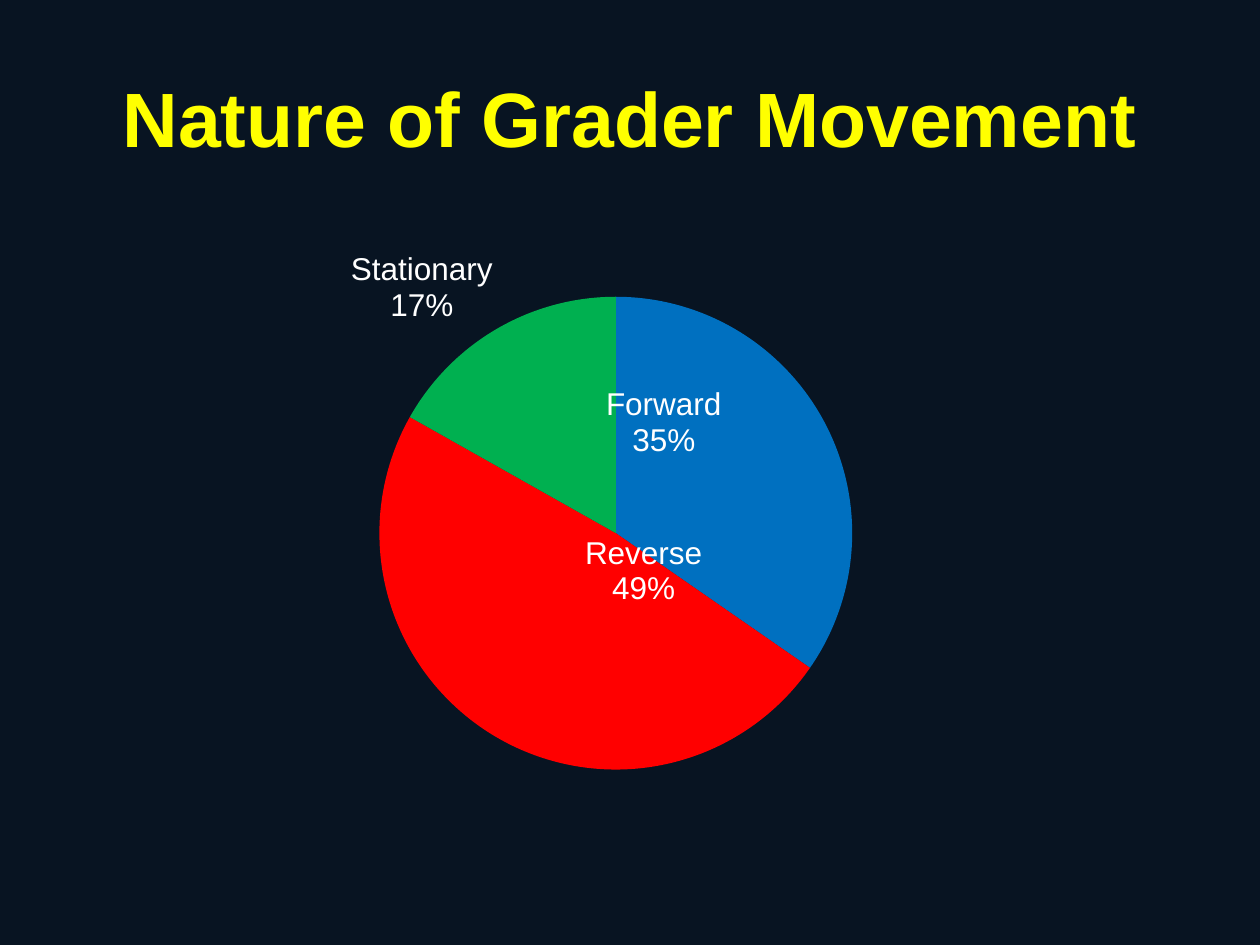
from lxml import etree
from pptx import Presentation
from pptx.chart.data import CategoryChartData
from pptx.dml.color import RGBColor
from pptx.enum.chart import XL_CHART_TYPE, XL_LABEL_POSITION
from pptx.enum.text import MSO_ANCHOR, PP_ALIGN
from pptx.oxml.ns import qn
from pptx.util import Emu, Pt

PIE = XL_CHART_TYPE.PIE
CENTER_LABEL = XL_LABEL_POSITION.CENTER
OUTSIDE_LABEL = XL_LABEL_POSITION.OUTSIDE_END
MIDDLE = MSO_ANCHOR.MIDDLE
CENTER = PP_ALIGN.CENTER

NAVY = RGBColor(0x08, 0x14, 0x22)
YELLOW = RGBColor(0xFF, 0xFF, 0x00)
WHITE = RGBColor(0xFF, 0xFF, 0xFF)
BLUE = RGBColor(0x00, 0x70, 0xC0)
RED = RGBColor(0xFF, 0x00, 0x00)
GREEN = RGBColor(0x00, 0xB0, 0x50)

FONT = "Arial"
EMU_PER_PX = 914400 / 126
MOVEMENTS = [("Forward", 35, BLUE), ("Reverse", 49, RED), ("Stationary", 17, GREEN)]
LABEL_SHIFTS = {0: (-0.05, -0.09), 1: (0.08, -0.1)}


def px(length):
    return Emu(round(length * EMU_PER_PX))


def style_font(font, size, color, bold=False):
    font.name = FONT
    font.size = Pt(size)
    font.bold = bold
    font.color.rgb = color


def add_title(slide, wording):
    title = slide.shapes.title
    title.left, title.top, title.width, title.height = px(63), px(38), px(1134), px(158)
    title.text_frame.word_wrap = True
    title.text_frame.vertical_anchor = MIDDLE
    heading = title.text_frame.paragraphs[0]
    heading.alignment = CENTER
    run = heading.add_run()
    run.text = wording
    style_font(run.font, 44, YELLOW, bold=True)


def make_layout(**settings):
    layout = etree.Element(qn("c:layout"))
    manual = etree.SubElement(layout, qn("c:manualLayout"))
    for tag, value in settings.items():
        etree.SubElement(manual, qn(f"c:{tag}")).set("val", str(value))
    return layout


def place_plot(chart):
    plot_area = chart.plots[0]._element.getparent()
    for automatic in plot_area.findall(qn("c:layout")):
        plot_area.remove(automatic)
    plot_area.insert(0, make_layout(layoutTarget="inner", xMode="edge", yMode="edge",
                                    x=0.279, y=0.123, w=0.417, h=0.758))


def show_name_and_percent(label):
    for tag, shown in (("showVal", "0"), ("showCatName", "1"), ("showPercent", "1")):
        label.find(qn(f"c:{tag}")).set("val", shown)
    separator = etree.Element(qn("c:separator"))
    separator.text = "\n"
    label.find(qn("c:showBubbleSize")).addnext(separator)


def label_slices(series):
    labels = series.data_labels
    style_font(labels.font, 18, WHITE)
    labels.position = OUTSIDE_LABEL
    show_name_and_percent(labels._element)
    for index, (x, y) in LABEL_SHIFTS.items():
        label = series.points[index].data_label
        style_font(label.font, 18, WHITE)
        label.position = CENTER_LABEL
    for element in labels._element.findall(qn("c:dLbl")):
        index = element.find(qn("c:idx"))
        x, y = LABEL_SHIFTS[int(index.get("val"))]
        index.addnext(make_layout(x=x, y=y))
        show_name_and_percent(element)


def add_movement_pie(slide):
    data = CategoryChartData()
    data.categories = [name for name, _, _ in MOVEMENTS]
    data.add_series("Series 1", [share for _, share, _ in MOVEMENTS])
    chart = slide.shapes.add_chart(PIE, px(63), px(220), px(1134), px(624), data).chart
    chart.has_title = False
    chart.has_legend = False
    style_font(chart.font, 18, WHITE)
    chart.plots[0].vary_by_categories = True
    series = chart.plots[0].series[0]
    for index, (_, _, color) in enumerate(MOVEMENTS):
        slice_format = series.points[index].format
        slice_format.fill.solid()
        slice_format.fill.fore_color.rgb = color
        slice_format.line.fill.background()
    place_plot(chart)
    label_slices(series)


def main():
    deck = Presentation()
    deck.slide_width, deck.slide_height = px(1260), px(945)
    slide = deck.slides.add_slide(deck.slide_layouts[5])
    slide.background.fill.solid()
    slide.background.fill.fore_color.rgb = NAVY
    add_title(slide, "Nature of Grader Movement")
    add_movement_pie(slide)
    deck.save("out.pptx")


if __name__ == "__main__":
    main()
